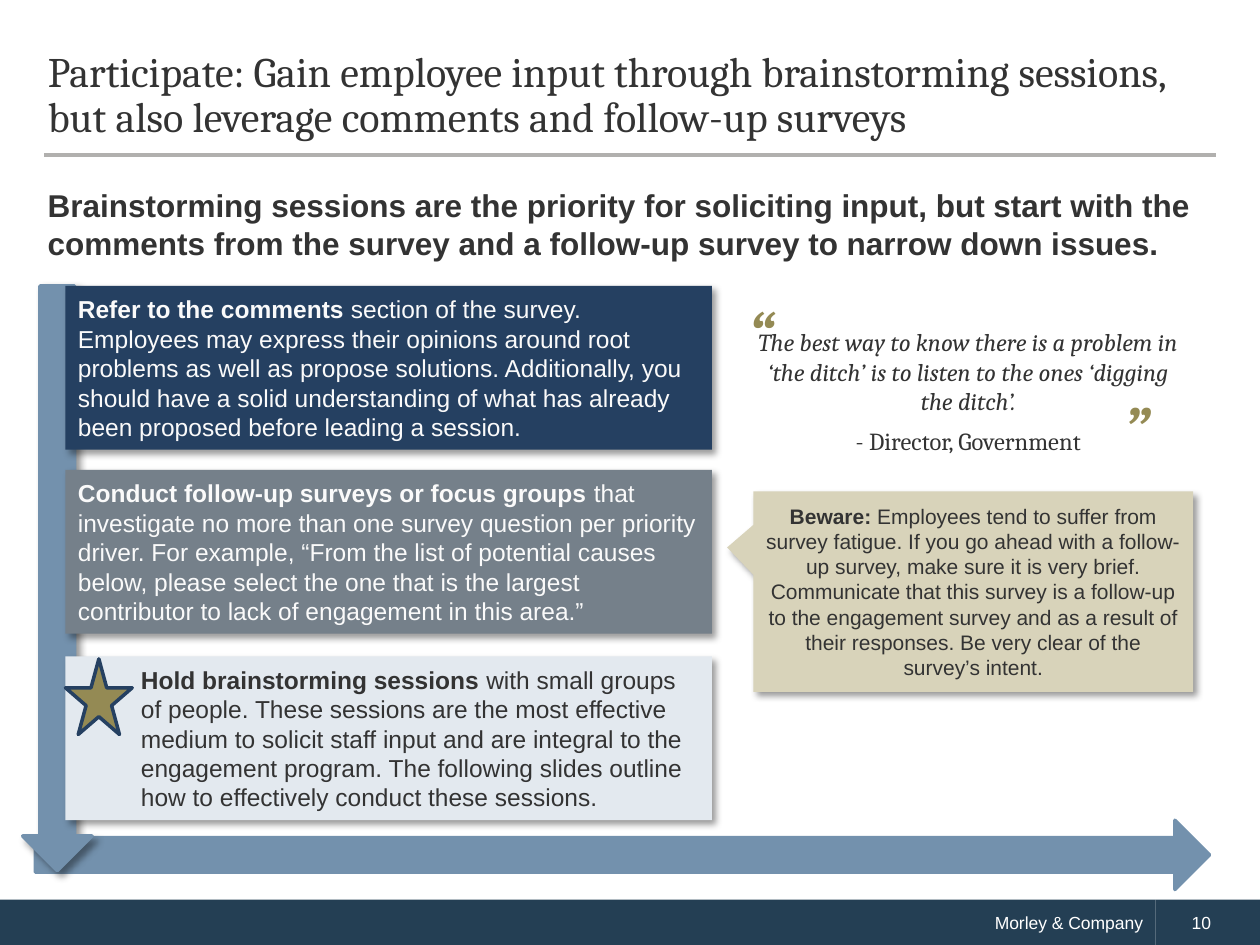
from dataclasses import dataclass

from lxml.etree import SubElement
from pptx import Presentation
from pptx.dml.color import RGBColor
from pptx.enum.shapes import MSO_CONNECTOR, MSO_SHAPE
from pptx.enum.text import MSO_ANCHOR, MSO_AUTO_SIZE, PP_ALIGN
from pptx.oxml.ns import qn
from pptx.util import Inches, Pt


@dataclass(frozen=True)
class Theme:
    heading_font: str = "Cambria"
    body_font: str = "Arial"
    ink: str = "333333"
    light: str = "FAFAFA"
    white: str = "FFFFFF"
    footer: str = "243F54"
    rule: str = "B1B0AE"
    arrow: str = "7391AD"
    navy: str = "254061"
    grey: str = "75808A"
    pale: str = "E3E9EF"
    gold: str = "948A54"
    sand: str = "D8D3BA"
    title_size: int = 24
    lead_size: int = 18
    text_size: int = 14
    note_size: int = 12
    footer_size: int = 10
    mark_size: int = 36


class SlideBuilder:
    def __init__(self, page, theme):
        self.page = page
        self.theme = theme

    def style(self, para, size, color, font=None, align=PP_ALIGN.LEFT, bold=None, italic=None):
        para.alignment = align
        para.font.name = font or self.theme.body_font
        para.font.size = Pt(size)
        para.font.color.rgb = RGBColor.from_string(color)
        para.font.bold = bold
        para.font.italic = italic

    def title(self, text, left, top, width, height):
        box = self.page.shapes.title
        box.left, box.top, box.width, box.height = map(Inches, (left, top, width, height))
        frame = box.text_frame
        frame.text = text
        frame.auto_size = MSO_AUTO_SIZE.NONE
        frame.vertical_anchor = MSO_ANCHOR.MIDDLE
        para = frame.paragraphs[0]
        para.line_spacing = Pt(26)
        self.style(para, self.theme.title_size, self.theme.ink, self.theme.heading_font)

    def rule(self, left, right, y):
        line = self.page.shapes.add_connector(
            MSO_CONNECTOR.STRAIGHT, Inches(left), Inches(y), Inches(right), Inches(y))
        line.line.color.rgb = RGBColor.from_string(self.theme.rule)
        line.line.width = Pt(1.75)
        SubElement(line._element.spPr, qn("a:effectLst"))

    def text(self, text, left, top, width, height, size, wrap=True, **look):
        box = self.page.shapes.add_textbox(*map(Inches, (left, top, width, height)))
        frame = box.text_frame
        frame.word_wrap = wrap
        frame.text = text
        for para in frame.paragraphs:
            self.style(para, size, **look)
        return frame

    def shape(self, kind, left, top, width, height, fill, line=None, shadow=False):
        shape = self.page.shapes.add_shape(kind, *map(Inches, (left, top, width, height)))
        shape.fill.solid()
        shape.fill.fore_color.rgb = RGBColor.from_string(fill)
        if line:
            shape.line.color.rgb = RGBColor.from_string(line)
            shape.line.width = Pt(2)
        else:
            shape.line.fill.background()
        shape.shadow.inherit = False
        if shadow:
            self.drop_shadow(shape)
        return shape

    def drop_shadow(self, shape):
        effects = shape._element.spPr.find(qn("a:effectLst"))
        outer = SubElement(effects, qn("a:outerShdw"), blurRad=str(Pt(4)), dist=str(Pt(3)),
                           dir=str(45 * 60000), algn="tl", rotWithShape="0")
        color = SubElement(outer, qn("a:srgbClr"), val="000000")
        SubElement(color, qn("a:alpha"), val="40000")

    def label(self, shape, lead, rest, size, color, align=PP_ALIGN.LEFT, indent=0):
        """Write a bold lead and plain remainder in the middle of a shape."""
        frame = shape.text_frame
        frame.word_wrap = True
        frame.vertical_anchor = MSO_ANCHOR.MIDDLE
        para = frame.paragraphs[0]
        self.style(para, size, color, align=align)
        if indent:
            para._p.get_or_add_pPr().set("marL", str(Inches(indent)))
        for words, bold in ((lead, True), (rest, False)):
            if words:
                span = para.add_run()
                span.text = words
                span.font.bold = bold


def main():
    theme = Theme()
    deck = Presentation()
    deck.slide_width, deck.slide_height = Inches(10), Inches(7.5)
    page = deck.slides.add_slide(deck.slide_layouts[5])
    build = SlideBuilder(page, theme)

    # Footer band
    for left, width, words, align, indent in (
            (0, 9.17, "Morley & Company", PP_ALIGN.RIGHT, 0),
            (9.17, 0.83, "10", PP_ALIGN.LEFT, 0.19)):
        band = build.shape(MSO_SHAPE.RECTANGLE, left, 7.14, width, 0.37, theme.footer)
        build.label(band, "", words, theme.footer_size, theme.white, align, indent)

    # Heading and lead sentence
    build.title("Participate: Gain employee input through brainstorming sessions, "
                "but also leverage comments and follow-up surveys", 0.28, 0.29, 9.43, 0.94)
    build.rule(0.35, 9.65, 1.23)
    build.text("Brainstorming sessions are the priority for soliciting input, but start with the "
               "comments from the survey and a follow-up survey to narrow down issues.",
               0.28, 1.43, 9.43, 0.72, theme.lead_size, color=theme.ink, bold=True)

    # Arrows along the left and the bottom
    build.shape(MSO_SHAPE.RIGHT_ARROW, 0.28, 6.51, 9.32, 0.55, theme.arrow, theme.arrow)
    build.shape(MSO_SHAPE.DOWN_ARROW, 0.18, 2.27, 0.55, 4.64, theme.arrow, theme.arrow, True)

    # Three ways to gather input
    steps = (
        (2.27, theme.navy, theme.light, 0, "Refer to the comments ",
         "section of the survey. Employees may express their opinions around root problems as "
         "well as propose solutions. Additionally, you should have a solid understanding of what "
         "has already been proposed before leading a session."),
        (3.73, theme.grey, theme.light, 0, "Conduct follow-up surveys or focus groups ",
         "that investigate no more than one survey question per priority driver. For example, "
         "“From the list of potential causes below, please select the one that is the largest "
         "contributor to lack of engagement in this area.”"),
        (5.21, theme.pale, theme.ink, 0.5, "Hold brainstorming sessions ",
         "with small groups of people. These sessions are the most effective medium to solicit "
         "staff input and are integral to the engagement program. The following slides outline "
         "how to effectively conduct these sessions."),
    )
    for top, fill, color, indent, lead, rest in steps:
        panel = build.shape(MSO_SHAPE.RECTANGLE, 0.52, top, 5.13, 1.3, fill, shadow=True)
        build.label(panel, lead, rest, theme.text_size, color, indent=indent)
    build.shape(MSO_SHAPE.STAR_5_POINT, 0.52, 5.23, 0.53, 0.6, theme.gold, theme.navy)

    # Quotation with its marks
    quote = build.text("The best way to know there is a problem in ‘the ditch’ is to listen to "
                       "the ones ‘digging the ditch’.\n- Director, Government",
                       5.9, 2.55, 3.57, 1.13, theme.text_size, color=theme.ink,
                       font=theme.heading_font, align=PP_ALIGN.CENTER, italic=True)
    for para in quote.paragraphs:
        para.space_before = Pt(6)
    quote.paragraphs[1].font.italic = False
    for mark, left, top in (("“", 5.81, 2.28), ("”", 8.79, 3.04)):
        build.text(mark, left, top, 0.46, 0.71, theme.mark_size, wrap=False, color=theme.gold,
                   font=theme.heading_font, align=PP_ALIGN.CENTER, bold=True, italic=True)

    # Warning that points at the follow-up surveys
    warning = build.shape(MSO_SHAPE.RECTANGULAR_CALLOUT, 5.98, 3.9, 3.49, 1.59,
                          theme.sand, shadow=True)
    warning.adjustments[0] = -0.56
    warning.adjustments[1] = -0.22
    build.label(warning, "Beware:",
                " Employees tend to suffer from survey fatigue. If you go ahead with a follow-up "
                "survey, make sure it is very brief. Communicate that this survey is a follow-up "
                "to the engagement survey and as a result of their responses. Be very clear of "
                "the survey’s intent.", theme.note_size, theme.ink, PP_ALIGN.CENTER)

    deck.save("out.pptx")


if __name__ == "__main__":
    main()
